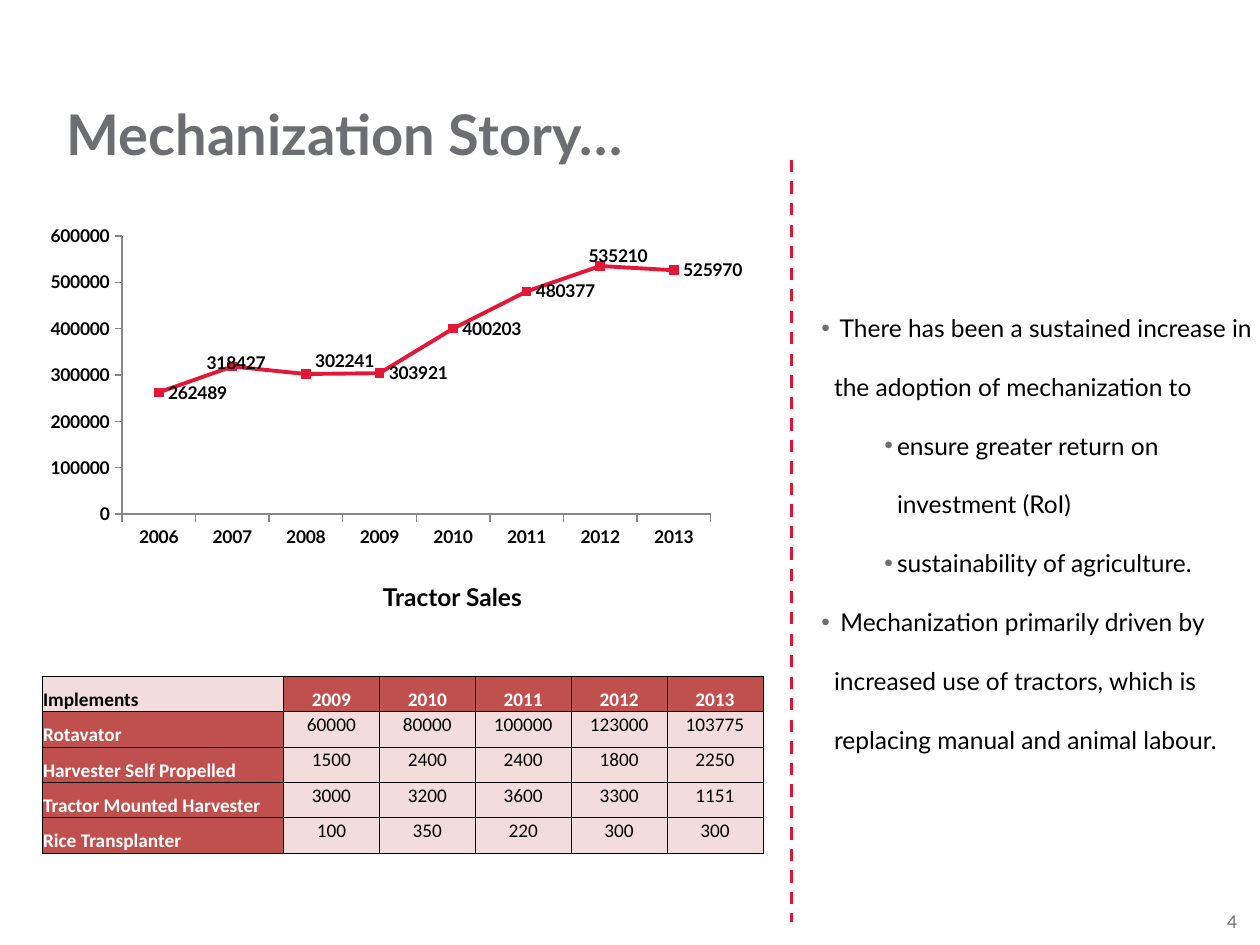
from lxml import etree
from pptx import Presentation
from pptx.chart.data import CategoryChartData
from pptx.dml.color import RGBColor
from pptx.enum.chart import XL_CHART_TYPE, XL_LABEL_POSITION, XL_TICK_MARK
from pptx.enum.dml import MSO_LINE
from pptx.enum.shapes import MSO_CONNECTOR
from pptx.enum.text import MSO_ANCHOR, PP_ALIGN
from pptx.oxml import parse_xml
from pptx.oxml.ns import nsdecls, qn
from pptx.util import Pt

COLORS = {
    "grey": "6D6E71", "black": "000000", "white": "FFFFFF", "axis": "868686",
    "sales": "E31837", "divider": "E31332", "header": "C0504D", "body": "F2DDDC",
}
RGB = {name: RGBColor.from_string(value) for name, value in COLORS.items()}


def style(font, size, color="black", bold=False, name="Lato"):
    font.name, font.size, font.bold = name, Pt(size), bold
    font.color.rgb = RGB[color]


def add_text(left, top, width, height, text="", wrap=True):
    frame = slide.shapes.add_textbox(Pt(left), Pt(top), Pt(width), Pt(height)).text_frame
    frame.margin_left = frame.margin_top = frame.margin_right = frame.margin_bottom = 0
    frame.word_wrap = wrap
    frame.text = text
    return frame


prs = Presentation()
prs.slide_width, prs.slide_height = Pt(720), Pt(540)
slide = prs.slides.add_slide(prs.slide_layouts[6])

# Slide number and title
number = add_text(694, 520.5, 13, 12.2, "4", wrap=False)
number.vertical_anchor = MSO_ANCHOR.MIDDLE
number.paragraphs[0].alignment = PP_ALIGN.RIGHT
style(number.paragraphs[0].font, 10, "grey")

title = add_text(38.2, 56.9, 647, 38.9, "Mechanization Story…")
style(title.paragraphs[0].font, 32, "grey", bold=True)

# Implements table
implements = [
    ["Implements", "2009", "2010", "2011", "2012", "2013"],
    ["Rotavator", "60000", "80000", "100000", "123000", "103775"],
    ["Harvester Self Propelled", "1500", "2400", "2400", "1800", "2250"],
    ["Tractor Mounted Harvester", "3000", "3200", "3600", "3300", "1151"],
    ["Rice Transplanter", "100", "350", "220", "300", "300"],
]
table = slide.shapes.add_table(5, 6, Pt(24), Pt(386.6), Pt(412), Pt(101)).table
table.first_row = table.horz_banding = False
for c, column in enumerate(table.columns):
    column.width = Pt(54.8 if c else 138)
for r, row in enumerate(implements):
    table.rows[r].height = Pt(20.2)
    for c, text in enumerate(row):
        cell = table.cell(r, c)
        cell.text = text
        cell.margin_left = cell.margin_right = cell.margin_top = Pt(0.6)
        cell.margin_bottom = 0
        heading = r == 0 or c == 0
        dark = heading and r != c
        cell.vertical_anchor = MSO_ANCHOR.BOTTOM if heading else MSO_ANCHOR.TOP
        cell.fill.solid()
        cell.fill.fore_color.rgb = RGB["header" if dark else "body"]
        paragraph = cell.text_frame.paragraphs[0]
        paragraph.alignment = PP_ALIGN.CENTER if c else PP_ALIGN.LEFT
        style(paragraph.font, 11, "white" if dark else "black", heading, "Calibri")
        for i, side in enumerate("LRTB"):
            cell._tc.get_or_add_tcPr().insert(i, parse_xml(
                f'<a:ln{side} {nsdecls("a")} w="{Pt(0.5)}"><a:solidFill>'
                f'<a:srgbClr val="{COLORS["black"]}"/></a:solidFill></a:ln{side}>'))

# Tractor sales chart
sales_data = CategoryChartData()
sales_data.categories = [str(year) for year in range(2006, 2014)]
sales_data.add_series("Series 1", (262489, 318427, 302241, 303921,
                                   400203, 480377, 535210, 525970))
chart = slide.shapes.add_chart(XL_CHART_TYPE.LINE, Pt(21.6), Pt(125.3), Pt(403.2),
                               Pt(191.5), sales_data).chart
chart.has_title = chart.has_legend = False
style(chart.font, 10)
for axis in (chart.category_axis, chart.value_axis):
    axis.has_major_gridlines = False
    axis.major_tick_mark = XL_TICK_MARK.OUTSIDE
    axis.format.line.color.rgb = RGB["axis"]
    style(axis.tick_labels.font, 10, bold=True)
chart.value_axis.minimum_scale = 0
chart.value_axis.maximum_scale = 600000
chart.value_axis.major_unit = 100000

sales = chart.plots[0].series[0]
sales.smooth = False
sales.marker.style = None
sales.format.line.color.rgb = RGB["sales"]
sales.format.line.width = Pt(2.25)
sales.data_labels.show_value = True
sales.data_labels.position = XL_LABEL_POSITION.RIGHT
style(sales.data_labels.font, 10, bold=True)

# Labels nudged clear of the line, as fractions of the chart size
for point, (dx, dy) in {1: (-0.05, -0.01), 2: (0, -0.04), 6: (-0.03, -0.03)}.items():
    label = sales.points[point].data_label
    label.position = XL_LABEL_POSITION.RIGHT
    style(label.font, 10, bold=True)
    idx = sales._element.xpath(f'.//c:dLbl/c:idx[@val="{point}"]')[0]
    idx.addnext(parse_xml(
        f'<c:layout {nsdecls("c")}><c:manualLayout><c:x val="{dx}"/><c:y val="{dy}"/>'
        '</c:manualLayout></c:layout>'))

# Fixed inner plot area
plot_area = chart._chartSpace.xpath(".//c:plotArea")[0]
for old in plot_area.findall(qn("c:layout")):
    plot_area.remove(old)
plot_area.insert(0, parse_xml(
    f'<c:layout {nsdecls("c")}><c:manualLayout><c:layoutTarget val="inner"/>'
    '<c:xMode val="edge"/><c:yMode val="edge"/><c:x val="0.12"/><c:y val="0.05"/>'
    '<c:w val="0.84"/><c:h val="0.83"/></c:manualLayout></c:layout>'))

# Key points
points = [
    (0, " There has been a sustained increase in the adoption of mechanization to"),
    (2, "ensure greater return on investment (RoI)"),
    (2, "sustainability of agriculture."),
    (0, " Mechanization primarily driven by increased use of tractors, "
        "which is replacing manual and animal labour."),
]
key_points = add_text(462.2, 162, 257.8, 285.8)
for i, (level, text) in enumerate(points):
    paragraph = key_points.add_paragraph() if i else key_points.paragraphs[0]
    paragraph.text = text
    paragraph.level = level
    paragraph.line_spacing = 2.0
    properties = paragraph._p.get_or_add_pPr()
    properties.set("marL", str(Pt(50.4 if level else 14.4)))
    properties.set("indent", str(Pt(-7.2)))
    bullet_color = etree.SubElement(properties, qn("a:buClr"))
    etree.SubElement(bullet_color, qn("a:srgbClr"), val=COLORS["grey"])
    etree.SubElement(properties, qn("a:buFont"), typeface="Arial")
    etree.SubElement(properties, qn("a:buChar"), char="•")
    style(paragraph.font, 14)

# Dashed divider
divider = slide.shapes.add_connector(MSO_CONNECTOR.STRAIGHT, Pt(452.2), Pt(91.4),
                                     Pt(452.2), Pt(527))
divider.line.color.rgb = RGB["divider"]
divider.line.width = Pt(1.75)
divider.line.dash_style = MSO_LINE.DASH
etree.SubElement(divider._element.spPr, qn("a:effectLst"))

# Chart caption
caption = add_text(124.6, 332.6, 267.8, 17.3, "Tractor Sales")
caption.paragraphs[0].alignment = PP_ALIGN.CENTER
style(caption.paragraphs[0].font, 14, bold=True)

prs.save("out.pptx")
